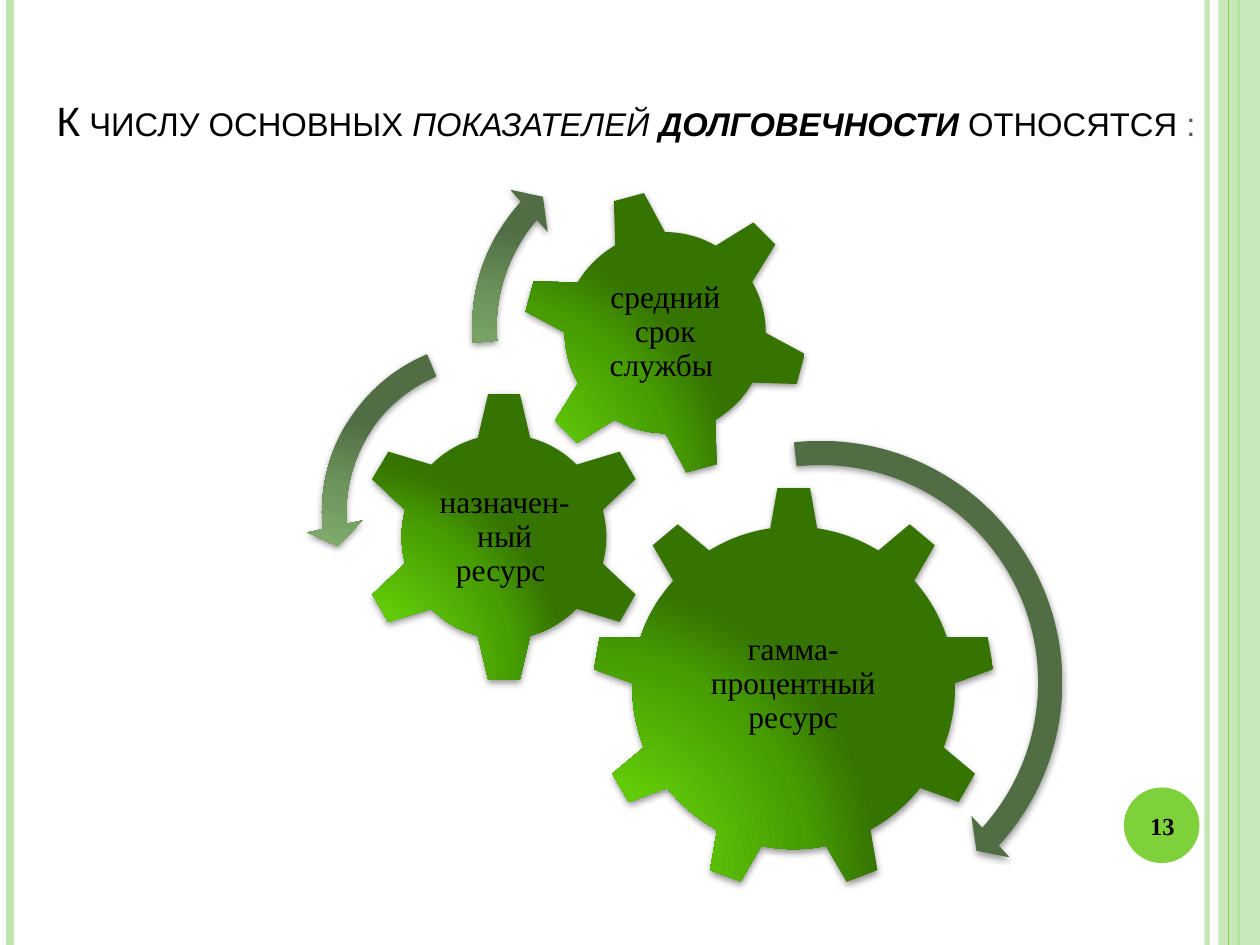
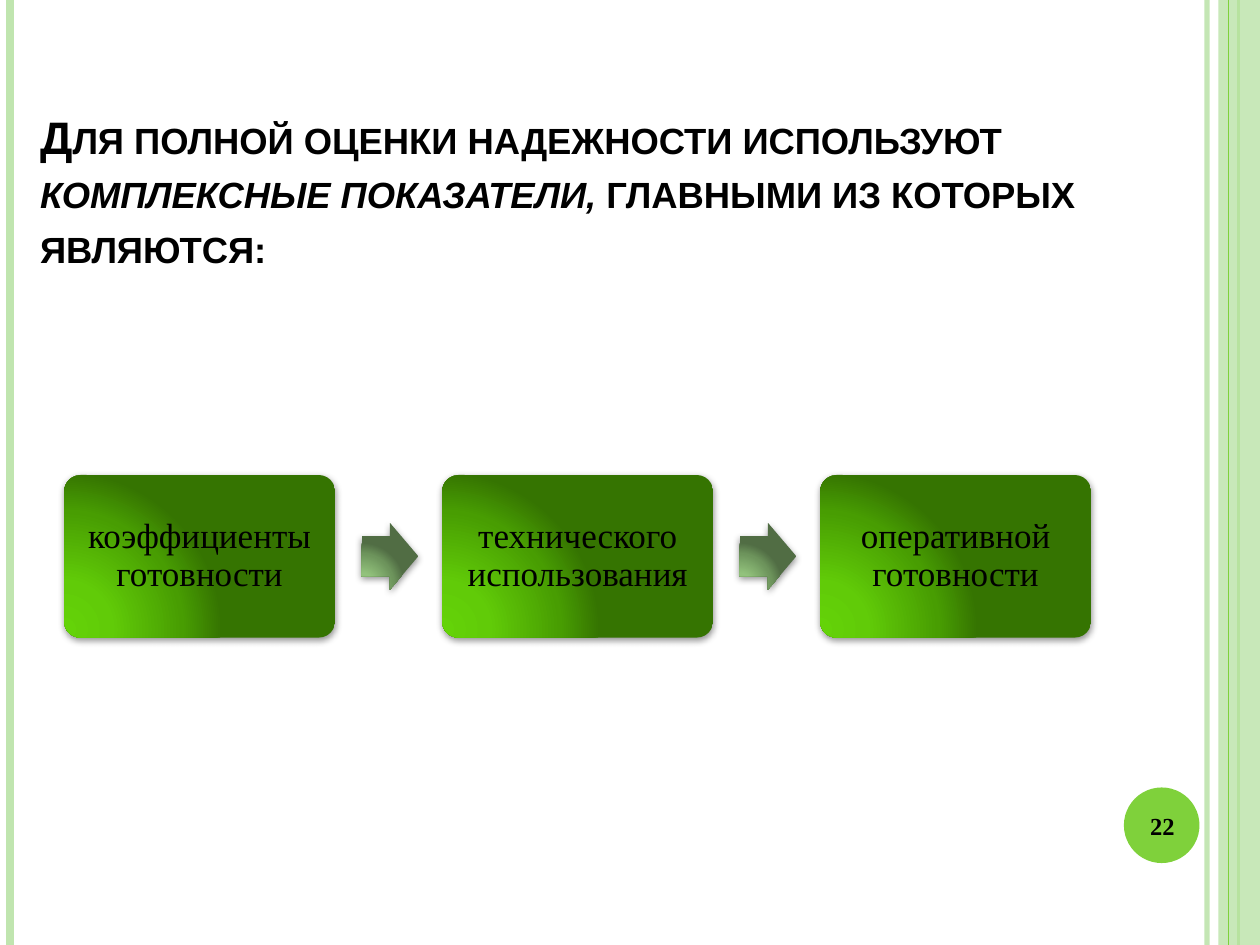
from pptx import Presentation
from pptx.dml.color import RGBColor
from pptx.enum.shapes import MSO_CONNECTOR, MSO_SHAPE
from pptx.enum.text import MSO_ANCHOR, PP_ALIGN
from pptx.oxml import parse_xml
from pptx.oxml.ns import nsdecls, qn
from pptx.util import Inches, Pt

RECT, OVAL, ROUNDED = MSO_SHAPE.RECTANGLE, MSO_SHAPE.OVAL, MSO_SHAPE.ROUNDED_RECTANGLE
GEAR_6, GEAR_9 = MSO_SHAPE.GEAR_6, MSO_SHAPE.GEAR_9
ARC, LEFT_ARC = MSO_SHAPE.CIRCULAR_ARROW, MSO_SHAPE.LEFT_CIRCULAR_ARROW
RIGHT_ARROW = MSO_SHAPE.RIGHT_ARROW
STRAIGHT = MSO_CONNECTOR.STRAIGHT
MIDDLE, BOTTOM = MSO_ANCHOR.MIDDLE, MSO_ANCHOR.BOTTOM
CENTER, LEFT = PP_ALIGN.CENTER, PP_ALIGN.LEFT

BLACK = RGBColor(0x00, 0x00, 0x00)
SLATE = RGBColor(0x4E, 0x5B, 0x6F)
GREEN = RGBColor(0x7F, 0xD1, 0x3B)
PALE_GREEN = RGBColor(0xC0, 0xE5, 0xAF)
# Gradient stops: percent and colour
BRIGHT = [(0, RGBColor(0x64, 0xD3, 0x08)), (30, RGBColor(0x61, 0xCB, 0x08)),
          (75, RGBColor(0x48, 0x9D, 0x02)), (100, RGBColor(0x35, 0x74, 0x01))]
MUTED = [(0, RGBColor(0x98, 0xCA, 0x81)), (30, RGBColor(0x92, 0xC2, 0x7C)),
         (75, RGBColor(0x6D, 0x94, 0x5C)), (100, RGBColor(0x51, 0x6D, 0x44))]

TITLE_FONT, BODY_FONT = "Arial", "Times New Roman"


def set_alpha(element, percent):
    color = next(element.iter(qn("a:srgbClr")))
    color.append(parse_xml(f'<a:alpha {nsdecls("a")} val="{percent * 1000}"/>'))


def add_rule(slide, x, color, width, alpha=None):
    """Draw a vertical line over the full slide height."""
    line = slide.shapes.add_connector(STRAIGHT, Inches(x), 0, Inches(x), Inches(7.5))
    line.line.color.rgb = color
    line.line.width = Pt(width)
    sp_pr = line._element.spPr
    if alpha:
        set_alpha(sp_pr, alpha)
    sp_pr.append(parse_xml(f'<a:effectLst {nsdecls("a")}/>'))


def add_shape(slide, kind, box, color=None, adjustments=()):
    sp = slide.shapes.add_shape(kind, *map(Inches, box))
    for i, value in enumerate(adjustments):
        sp.adjustments[i] = value
    sp.line.fill.background()
    sp.shadow.inherit = False
    if color is not None:
        sp.fill.solid()
        sp.fill.fore_color.rgb = color
    return sp


def add_glossy(slide, kind, box, stops, adjustments=()):
    """Add a shape with a radial gradient and a soft shadow below."""
    sp = add_shape(slide, kind, box, adjustments=adjustments)
    sp.fill.background()
    sp_pr = sp._element.spPr
    gs = "".join(f'<a:gs pos="{pos * 1000}"><a:srgbClr val="{color}"/></a:gs>'
                 for pos, color in stops)
    sp_pr.replace(sp_pr.find(qn("a:noFill")), parse_xml(
        f'<a:gradFill {nsdecls("a")} rotWithShape="1"><a:gsLst>{gs}</a:gsLst>'
        '<a:path path="circle"><a:fillToRect l="5000" t="100000" r="120000" b="10000"/>'
        '</a:path></a:gradFill>'))
    sp_pr.find(qn("a:effectLst")).append(parse_xml(
        f'<a:outerShdw {nsdecls("a")} blurRad="{Pt(4)}" dist="{Pt(1.6)}" dir="5400000" '
        'rotWithShape="0"><a:srgbClr val="000000"><a:alpha val="42000"/></a:srgbClr>'
        '</a:outerShdw>'))
    return sp


def write(sp, runs, anchor=MIDDLE, align=CENTER, inset=None, spacing=None):
    """Fill a shape with one paragraph; runs are (text, font format) pairs."""
    tf = sp.text_frame
    tf.word_wrap = True
    tf.vertical_anchor = anchor
    if inset is not None:
        for side in ("left", "top", "right", "bottom"):
            setattr(tf, f"margin_{side}", Inches(inset))
    p = tf.paragraphs[0]
    p.alignment = align
    if spacing:
        p.line_spacing = spacing
    for text, font in runs:
        r = p.add_run()
        r.text = text
        r.font.color.rgb = font.get("color", BLACK)
        for name, value in font.items():
            if name != "color":
                setattr(r.font, name, value)


def add_text(slide, box, runs, **layout):
    sp = slide.shapes.add_textbox(*map(Inches, box))
    write(sp, runs, **layout)
    return sp


def add_title(slide, box, size, runs):
    base = {"name": TITLE_FONT, "size": Pt(size)}
    sp = add_text(slide, box, [(text, base | font) for text, font in runs],
                  anchor=BOTTOM, align=LEFT)
    for r in sp.text_frame.paragraphs[0].runs:
        r._r.get_or_add_rPr().set("cap", "small")


def add_slide(prs, number):
    """Add a blank slide with the side bands and the page number."""
    slide = prs.slides.add_slide(prs.slide_layouts[6])
    add_rule(slide, 9.58, PALE_GREEN, 3, alpha=93)
    add_rule(slide, 0.08, PALE_GREEN, 4.5)
    add_rule(slide, 9.83, GREEN, 1.5)
    band = add_shape(slide, RECT, (9.67, 0, 0.33, 7.5), PALE_GREEN)
    set_alpha(band._element.spPr, 87)
    add_rule(slide, 9.75, GREEN, 0.75)
    add_shape(slide, OVAL, (8.92, 6.25, 0.6, 0.6), GREEN)
    add_text(slide, (8.89, 6.27, 0.67, 0.57),
             [(str(number), {"name": BODY_FONT, "size": Pt(14), "bold": True})])
    return slide


def add_gear(slide, kind, box, label, label_box, rotation=0):
    add_glossy(slide, kind, box, BRIGHT).rotation = rotation
    add_text(slide, label_box, [(label, {"name": BODY_FONT, "size": Pt(18)})],
             inset=0.03, spacing=0.9)


def build_durability(prs):
    slide = add_slide(prs, 13)
    add_title(slide, (0.35, 0.28, 9.5, 0.92), 23.4, [
        ("К числу основных ", {}),
        ("показателей ", {"italic": True}),
        ("долговечности", {"italic": True, "bold": True}),
        (" относятся ", {}),
        (":", {"color": SLATE}),
    ])
    add_gear(slide, GEAR_9, (4.7, 3.86, 3.2, 3.2),
             "гамма-процентный ресурс", (5.34, 4.61, 1.91, 1.64))
    add_gear(slide, GEAR_6, (2.84, 3.1, 2.32, 2.32),
             "назначен-ный ресурс ", (3.43, 3.69, 1.15, 1.15))
    add_gear(slide, GEAR_6, (4.14, 1.5, 2.28, 2.28),
             "средний срок службы ", (4.64, 2, 1.28, 1.28), rotation=345)
    for kind, box, adjustments in (
        (ARC, (4.47, 3.37, 4.09, 4.09), (0.047, 2.99, 25.377, 158.156, 0.055)),
        (LEFT_ARC, (2.43, 2.58, 2.97, 2.97), (0.065, 4.3, 104.891, 148.378, 0.075)),
        (ARC, (3.62, 0.99, 3.21, 3.21), (0.06, 3.941, 133.138, 105.082, 0.07)),
    ):
        add_glossy(slide, kind, box, MUTED, adjustments)


def build_complex_indicators(prs):
    slide = add_slide(prs, 22)
    add_title(slide, (0.22, 0.72, 9.5, 1.49), 26, [
        ("Для полной оценки надежности используют ", {"bold": True}),
        ("комплексные показатели,", {"bold": True, "italic": True}),
        (" главными из которых являются:", {"bold": True}),
    ])
    steps = ["коэффициенты готовности", "технического использования",
             "оперативной готовности"]
    for i, label in enumerate(steps):
        x = 0.51 + 3 * i
        if i:
            add_glossy(slide, RIGHT_ARROW, (x - 0.64, 4.15, 0.45, 0.53), MUTED, (0.6, 0.5))
        card = add_glossy(slide, ROUNDED, (x, 3.77, 2.15, 1.29), BRIGHT, (0.1,))
        write(card, [(label, {"name": BODY_FONT, "size": Pt(20)})],
              inset=0.08, spacing=0.9)


def main():
    prs = Presentation()
    prs.slide_width, prs.slide_height = Inches(10), Inches(7.5)
    build_durability(prs)
    build_complex_indicators(prs)
    prs.save("out.pptx")


if __name__ == "__main__":
    main()
